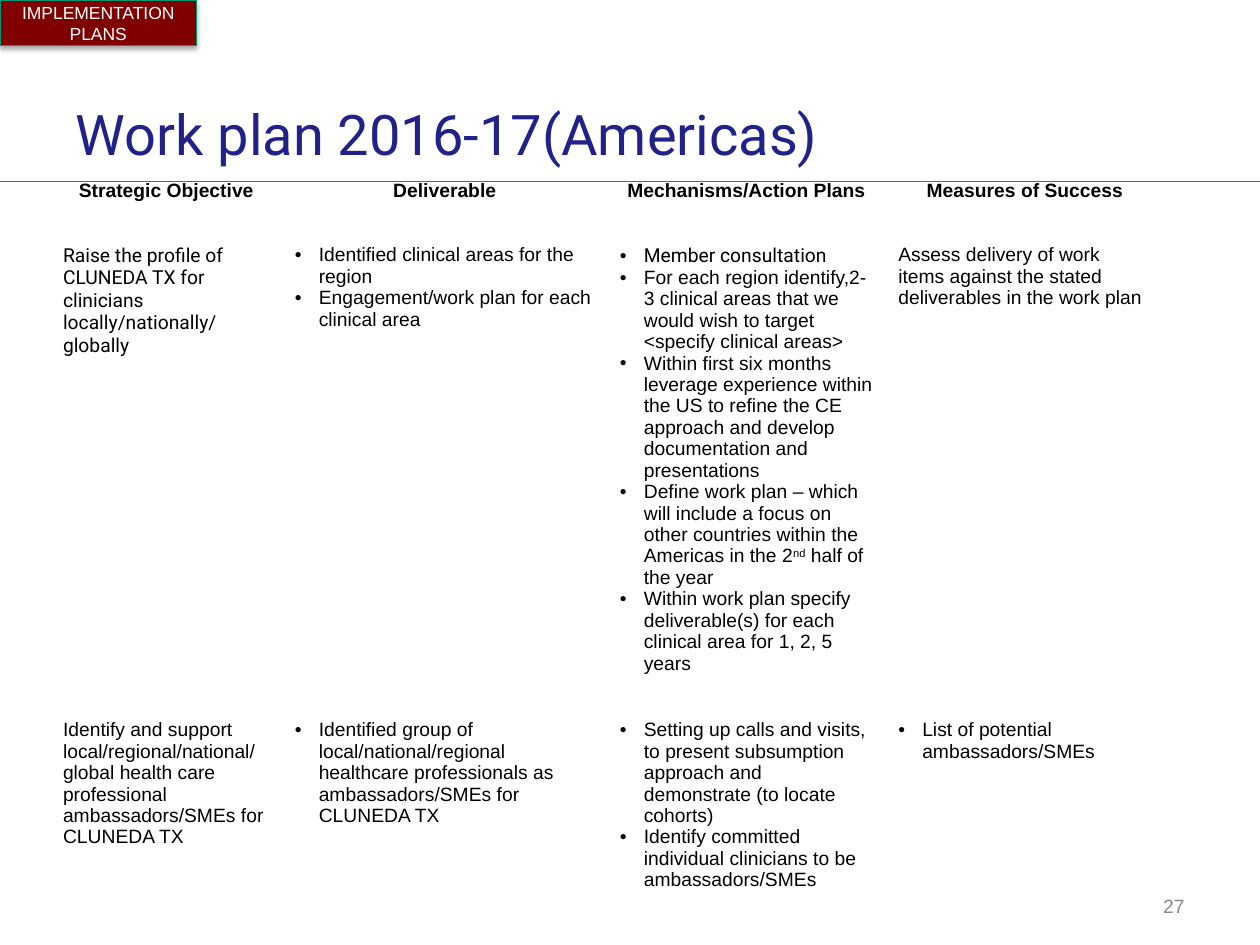
import pptx
import pptx.util
import pptx.dml.color
import pptx.enum.shapes
import pptx.enum.text
import pptx.oxml
import pptx.oxml.ns
from lxml import etree

Inches = pptx.util.Inches
Pt = pptx.util.Pt
RGB = pptx.dml.color.RGBColor
Align = pptx.enum.text.PP_ALIGN
Middle = pptx.enum.text.MSO_ANCHOR.MIDDLE

BLACK = RGB(0x00, 0x00, 0x00)
WHITE = RGB(0xFF, 0xFF, 0xFF)
NAVY = RGB(0x21, 0x21, 0x8A)
GRAY = RGB(0x88, 0x88, 0x88)
RULE = RGB(0x66, 0x66, 0x66)
MAROON = RGB(0x80, 0x00, 0x00)
GREEN = RGB(0x00, 0x98, 0x70)

TITLE = "Work plan 2016-17(Americas)"
TAG = "IMPLEMENTATION PLANS"
PAGE = "27"
ALT = {"face": "Roboto"}
SUPER = {"base": 30}

HEADS = ["Strategic Objective", "Deliverable",
         "Mechanisms/Action Plans", "Measures of Success"]
# A list is bulleted; a tuple is a paragraph of runs; a pair in it is text and format.
BODY = [
    [
        (("Raise the profile of CLUNEDA TX for clinicians "
          "locally/nationally/ globally", ALT),),
        ["Identified clinical areas for the region",
         "Engagement/work plan for each clinical area"],
        [(("Member consultation", ALT),),
         "For each region identify,2-3 clinical areas that we would wish "
         "to target <specify clinical areas>",
         "Within first six months leverage experience within the US to refine "
         "the CE approach and develop documentation and presentations",
         ("Define work plan – which will include a focus on other countries "
          "within the Americas in the 2", ("nd", SUPER), " half of the year"),
         "Within work plan specify deliverable(s) for each clinical area "
         "for 1, 2, 5 years"],
        "Assess delivery of work items against the stated deliverables "
        "in the work plan",
    ],
    [
        "Identify and support local/regional/national/ global health care "
        "professional ambassadors/SMEs for CLUNEDA TX",
        ["Identified group of local/national/regional healthcare professionals "
         "as ambassadors/SMEs for CLUNEDA TX"],
        ["Setting up calls and visits, to present subsumption approach and "
         "demonstrate (to locate cohorts)",
         "Identify committed individual clinicians to be ambassadors/SMEs"],
        ["List of potential ambassadors/SMEs"],
    ],
]
COLS = [1.84, 2.58, 2.21, 2.21]
ROWS = [0.51, 0.99, 0.99]
PLAIN = "{2D5ABB26-0587-4C30-8999-92F81FD0307C}"


def child(node, tag, **attrs):
    return etree.SubElement(node, pptx.oxml.ns.qn(tag), attrs)


def write(para, text, size=11, face="Arial", color=BLACK, bold=False,
          align=Align.LEFT, base=0):
    para.alignment = align
    run = para.add_run()
    run.text = text
    font = run.font
    font.size, font.name, font.bold = Pt(size), face, bold
    font.color.rgb = color
    if base:
        font._element.set("baseline", str(base * 1000))


def bullet(para):
    props = para._p.get_or_add_pPr()
    props.set("marL", str(Inches(0.19)))
    props.set("indent", str(-Inches(0.19)))
    child(child(props, "a:buClr"), "a:srgbClr", val=str(BLACK))
    child(props, "a:buFont", typeface="Arial")
    child(props, "a:buChar", char="•")


def fill(cell, entry, **fmt):
    """Write a cell's entry, one paragraph for each item."""
    listed = isinstance(entry, list)
    frame = cell.text_frame
    for i, item in enumerate(entry if listed else [entry]):
        para = frame.add_paragraph() if i else frame.paragraphs[0]
        if listed:
            bullet(para)
        for run in item if isinstance(item, tuple) else (item,):
            text, extra = run if isinstance(run, tuple) else (run, {})
            write(para, text, **fmt, **extra)


def place(shape, left, top, width, height):
    shape.left, shape.top = Inches(left), Inches(top)
    shape.width, shape.height = Inches(width), Inches(height)


def add_rule(slide):
    line = slide.shapes.add_connector(
        pptx.enum.shapes.MSO_CONNECTOR.STRAIGHT,
        0, Inches(1.44), Inches(10), Inches(1.44))
    line.line.color.rgb = RULE
    line.line.width = Pt(0.75)
    child(line._element.spPr, "a:effectLst")


def add_page(slide):
    box = slide.shapes.add_textbox(
        Inches(7.17), Inches(7.03), Inches(2.33), Inches(0.32))
    frame = box.text_frame
    frame.word_wrap = True
    frame.vertical_anchor = Middle
    write(frame.paragraphs[0], PAGE, color=GRAY, align=Align.RIGHT)


def add_title(slide):
    title = slide.shapes.title
    place(title, 0.5, 0.78, 7.21, 0.56)
    frame = title.text_frame
    frame.auto_size = pptx.enum.text.MSO_AUTO_SIZE.NONE
    frame.vertical_anchor = Middle
    frame.margin_top = frame.margin_bottom = Inches(0.1)
    write(frame.paragraphs[0], TITLE, size=32, face="Roboto", color=NAVY)


def add_plan(slide):
    table = slide.shapes.add_table(
        len(ROWS), len(COLS), Inches(0.4), Inches(1.38),
        Inches(sum(COLS)), Inches(sum(ROWS))).table
    table.first_row = table.horz_banding = False
    table._tbl.tblPr.find(pptx.oxml.ns.qn("a:tableStyleId")).text = PLAIN
    for col, width in zip(table.columns, COLS):
        col.width = Inches(width)
    for row, height in zip(table.rows, ROWS):
        row.height = Inches(height)
    for r, row in enumerate([HEADS] + BODY):
        fmt = {} if r else {"bold": True, "align": Align.CENTER}
        for c, entry in enumerate(row):
            cell = table.cell(r, c)
            cell.fill.background()
            fill(cell, entry, **fmt)


def add_tag(slide):
    tag = slide.shapes.add_shape(
        pptx.enum.shapes.MSO_SHAPE.RECTANGLE,
        0, 0, Inches(1.56), Inches(0.36))
    tag.fill.solid()
    tag.fill.fore_color.rgb = MAROON
    tag.line.color.rgb = GREEN
    tag.line.width = Pt(0.75)
    tag.shadow.inherit = False
    effects = tag._element.spPr.find(pptx.oxml.ns.qn("a:effectLst"))
    shade = child(effects, "a:outerShdw", blurRad=str(Pt(3.1)),
                  dist=str(Pt(1.8)), dir="5400000", rotWithShape="0")
    child(child(shade, "a:srgbClr", val=str(BLACK)), "a:alpha", val="35000")
    frame = tag.text_frame
    frame.word_wrap = True
    frame.vertical_anchor = Middle
    write(frame.paragraphs[0], TAG, size=10, color=WHITE, align=Align.CENTER)


def main():
    deck = pptx.Presentation()
    deck.slide_width, deck.slide_height = Inches(10), Inches(7.5)
    slide = deck.slides.add_slide(deck.slide_layouts[5])
    for add in (add_rule, add_page, add_title, add_plan, add_tag):
        add(slide)
    deck.save("out.pptx")


if __name__ == "__main__":
    main()
